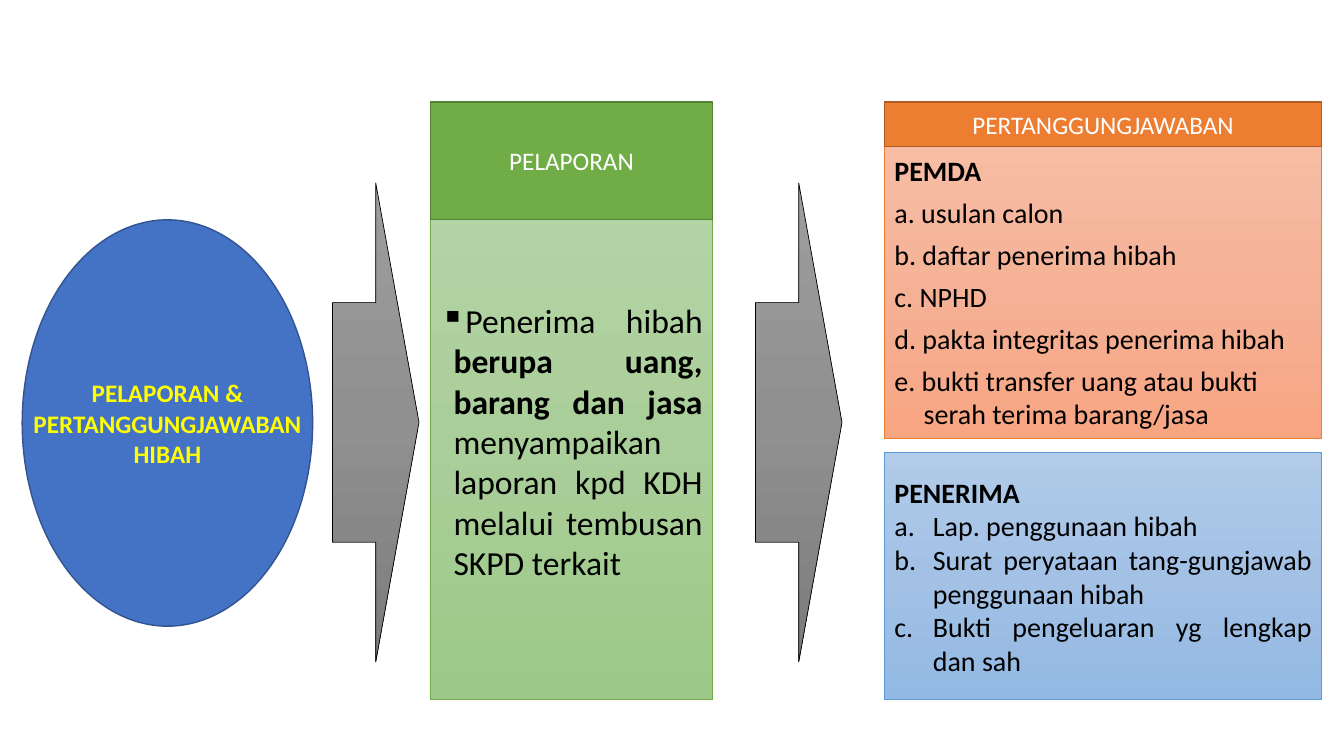
from lxml import etree
from pptx import Presentation
from pptx.dml.color import RGBColor
from pptx.enum.shapes import MSO_SHAPE
from pptx.enum.text import MSO_ANCHOR, PP_ALIGN
from pptx.oxml.ns import qn
from pptx.util import Cm, Pt

RECT, OVAL, ARROW = MSO_SHAPE.RECTANGLE, MSO_SHAPE.OVAL, MSO_SHAPE.RIGHT_ARROW
LEFT, MID, JUST = PP_ALIGN.LEFT, PP_ALIGN.CENTER, PP_ALIGN.JUSTIFY
CENTER = MSO_ANCHOR.MIDDLE
FONT = "Calibri"
GREY = ("9D9D9D", "909090", "7C7C7C")
GREEN = ("B5D5A7", "AACE9A", "9CC987")
PEACH = ("F7BDA5", "F5B196", "F8A582")
BLUE = ("B1CBE9", "A3C1E5", "93B9E4")
DOT = ("buChar", "char", "▪")
ABC = ("buAutoNum", "type", "alphaLcPeriod")


def color(code):
    """Turn a hex string into a colour."""
    return RGBColor.from_string(code)


def blend(shape, codes):
    """Fill a shape with evenly spaced colours from top to bottom."""
    props = shape.fill._xPr
    grad = etree.Element(qn("a:gradFill"), rotWithShape="1")
    stops = etree.SubElement(grad, qn("a:gsLst"))
    for i, code in enumerate(codes):
        place = str(100000 * i // (len(codes) - 1))
        stop = etree.SubElement(stops, qn("a:gs"), pos=place)
        etree.SubElement(stop, qn("a:srgbClr"), val=code)
    etree.SubElement(grad, qn("a:lin"), ang="5400000", scaled="0")
    props.find(qn("a:prstGeom")).addnext(grad)


def block(slide, kind, box, fill, edge, width):
    """Add a shape with a plain or blended fill."""
    shape = slide.shapes.add_shape(kind, *map(Cm, box))
    shape.shadow.inherit = False
    if isinstance(fill, tuple):
        blend(shape, fill)
    else:
        shape.fill.solid()
        shape.fill.fore_color.rgb = color(fill)
    shape.line.color.rgb = color(edge)
    shape.line.width = Pt(width)
    return shape


def write(shape, lines, size, tint, bold=False, align=LEFT):
    """Put lines of text in a shape and return its paragraphs."""
    frame = shape.text_frame
    frame.word_wrap = True
    frame.vertical_anchor = CENTER
    frame.text = "\n".join(lines)
    for para in frame.paragraphs:
        para.alignment = align
        for run in para.runs:
            style(run, size, tint, bold)
    return frame.paragraphs


def style(run, size, tint, bold):
    """Set the font of a run."""
    run.font.name, run.font.size, run.font.bold = FONT, Pt(size), bold
    run.font.color.rgb = color(tint)


def hang(para, depth, mark=None):
    """Give a paragraph a hanging indent and perhaps a bullet."""
    props = para._p.get_or_add_pPr()
    props.set("marL", str(Cm(depth)))
    props.set("indent", str(-Cm(depth)))
    if mark:
        tag, key, value = mark
        etree.SubElement(props, qn("a:" + tag)).set(key, value)


def header(slide, box, title, fill, edge):
    """Draw a column header."""
    write(block(slide, RECT, box, fill, edge, 1), [title], 18, "FFFFFF", align=MID)


def topic(slide, x, y, w, h):
    """Draw the oval topic with its label."""
    block(slide, OVAL, (x, y, w, h), "4472C4", "325491", 1)
    wide, tall = 11.35, 3.02
    box = (x + (w - wide) / 2, y + (h - tall) / 2, wide, tall)
    label = slide.shapes.add_textbox(*map(Cm, box))
    lines = ["PELAPORAN &", "PERTANGGUNGJAWABAN", "HIBAH"]
    write(label, lines, 18, "FFFF00", True, MID)


def report(slide, x, y, w, h):
    """Draw the reporting column."""
    drop = 2.03
    body = block(slide, RECT, (x, y + drop, w, h - drop), GREEN, "70AD47", 0.5)
    para = write(body, [""], 24, "000000", align=JUST)[0]
    hang(para, 0.33, DOT)
    parts = [("Penerima hibah ", False),
             ("berupa uang, barang dan jasa ", True),
             ("menyampaikan laporan kpd KDH melalui tembusan SKPD terkait", False)]
    for words, bold in parts:
        run = para.add_run()
        run.text = words
        style(run, 24, "000000", bold)
    header(slide, (x, y, w, 2.97), "PELAPORAN", "70AD47", "538035")


def account(slide, x, y, w, h):
    """Draw the accountability column."""
    local = block(slide, RECT, (x, y + 1.07, w, 7.42), PEACH, "ED7D31", 0.5)
    lines = ["PEMDA", "a. usulan calon", "b. daftar penerima hibah", "c. NPHD",
             "d. pakta integritas penerima hibah",
             "e. bukti transfer uang atau bukti serah terima barang/jasa"]
    title, *items = write(local, lines, 20, "000000")
    title.runs[0].font.bold = True
    for item in items:
        hang(item, 0.74 if item is items[-1] else 1.02)
        item.space_before = Pt(6)

    low = 8.83
    taker = block(slide, RECT, (x, y + low, w, h - low), BLUE, "5B9BD5", 0.5)
    lines = ["PENERIMA", "Lap. penggunaan hibah",
             "Surat peryataan tang-gungjawab penggunaan hibah",
             "Bukti pengeluaran yg lengkap dan sah"]
    title, *items = write(taker, lines, 20, "000000", align=JUST)
    title.runs[0].font.bold = True
    title.alignment = items[0].alignment = LEFT
    for item in items:
        hang(item, 0.97, ABC)
    header(slide, (x, y, w, 1.12), "PERTANGGUNGJAWABAN", "ED7D31", "AF5C24")


def main():
    """Build and save the slide."""
    deck = Presentation()
    deck.slide_width, deck.slide_height = Cm(33.87), Cm(19.05)
    slide = deck.slides.add_slide(deck.slide_layouts[6])
    topic(slide, 0.56, 5.54, 7.32, 10.24)
    for x in (8.38, 19.04):
        block(slide, ARROW, (x, 4.61, 2.18, 12.07), GREY, "000000", 0.5)
    report(slide, 10.85, 2.57, 7.11, 15.06)
    account(slide, 22.29, 2.57, 11.02, 15.06)
    deck.save("out.pptx")


if __name__ == "__main__":
    main()
